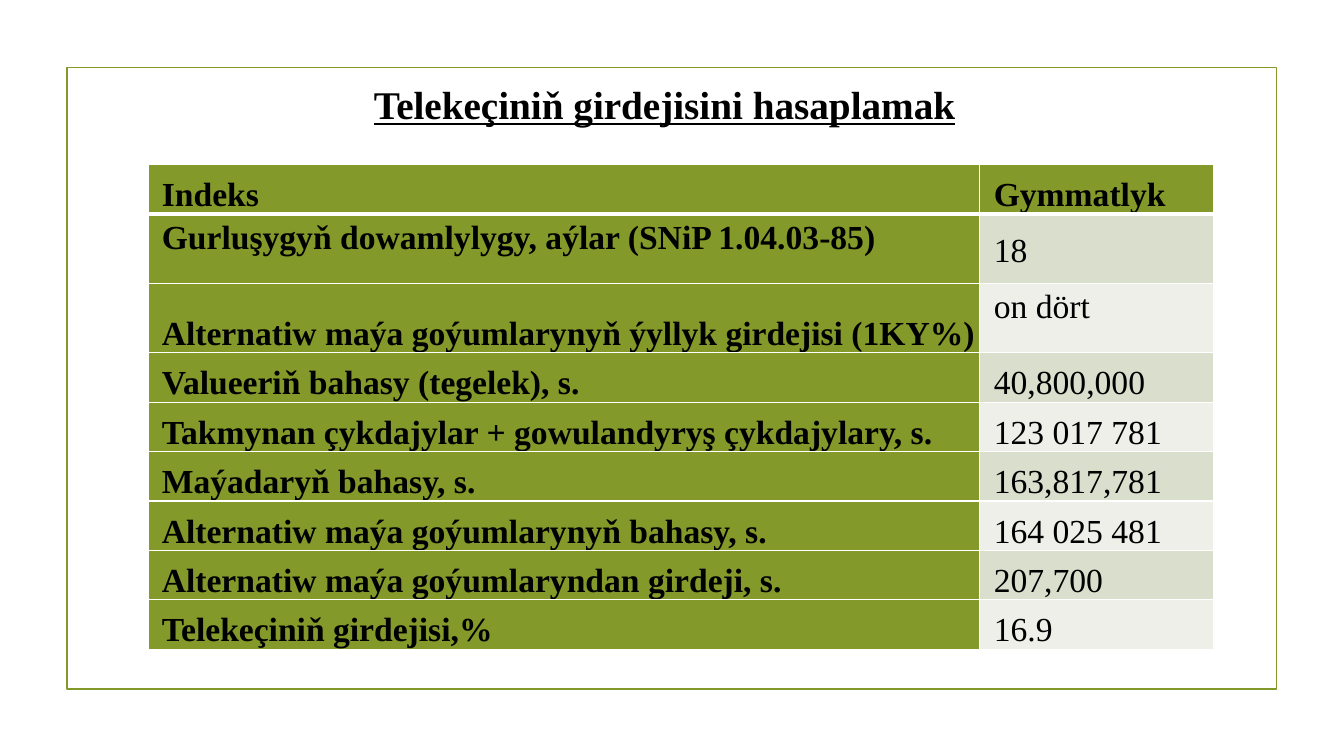
from lxml import etree
from pptx import Presentation
from pptx.dml.color import RGBColor
from pptx.enum.shapes import MSO_SHAPE
from pptx.enum.text import MSO_ANCHOR, MSO_AUTO_SIZE, PP_ALIGN
from pptx.oxml.ns import qn
from pptx.util import Pt

RECTANGLE = MSO_SHAPE.RECTANGLE
TOP, MIDDLE, BOTTOM = MSO_ANCHOR.TOP, MSO_ANCHOR.MIDDLE, MSO_ANCHOR.BOTTOM
JUSTIFY = PP_ALIGN.JUSTIFY
FIT_SHAPE = MSO_AUTO_SIZE.SHAPE_TO_FIT_TEXT

FONT = "Times New Roman"
BLACK = RGBColor(0x00, 0x00, 0x00)
WHITE = RGBColor(0xFF, 0xFF, 0xFF)
OLIVE = RGBColor(0x83, 0x99, 0x2A)
BANDS = (RGBColor(0xD9, 0xDE, 0xCD), RGBColor(0xED, 0xEF, 0xE8))

ROW, TALL_ROW = 35.3, 49.5
COLUMNS = (593.3, 167.8)
ROWS = [
    ("Indeks", "Gymmatlyk", BOTTOM, BOTTOM, ROW),
    ("Gurluşygyň dowamlylygy, aýlar (SNiP 1.04.03-85)", "18", TOP, MIDDLE, TALL_ROW),
    ("Alternatiw maýa goýumlarynyň ýyllyk girdejisi (1KY%)", "on dört", BOTTOM, TOP, TALL_ROW),
    ("Valueeriň bahasy (tegelek), s.", "40,800,000", BOTTOM, BOTTOM, ROW),
    ("Takmynan çykdajylar + gowulandyryş çykdajylary, s.", "123 017 781", BOTTOM, BOTTOM, ROW),
    ("Maýadaryň bahasy, s.", "163,817,781", BOTTOM, BOTTOM, ROW),
    ("Alternatiw maýa goýumlarynyň bahasy, s.", "164 025 481", BOTTOM, BOTTOM, ROW),
    ("Alternatiw maýa goýumlaryndan girdeji, s.", "207,700", BOTTOM, BOTTOM, ROW),
    ("Telekeçiniň girdejisi,%", "16.9", BOTTOM, BOTTOM, ROW),
]


def add_run(p, text, size, bold, underline=None):
    r = p.add_run()
    r.text = text
    r.font.name = FONT
    r.font.size = Pt(size)
    r.font.bold = bold
    r.font.underline = underline
    r.font.color.rgb = BLACK


def add_frame(s):
    sp = s.shapes.add_shape(RECTANGLE, Pt(47.9), Pt(48.2), Pt(864), Pt(444.2))
    sp.shadow.inherit = False
    sp.fill.background()
    sp.line.color.rgb = OLIVE
    sp.line.width = Pt(1.25)


def add_title(s, text):
    sp = s.shapes.add_textbox(Pt(259.9), Pt(54), Pt(434.2), Pt(41))
    tf = sp.text_frame
    tf.word_wrap = False
    tf.auto_size = FIT_SHAPE
    add_run(tf.paragraphs[0], text, 28, True, True)


def set_borders(cell, widths):
    tcPr = cell._tc.get_or_add_tcPr()
    for i, (side, width) in enumerate(widths.items()):
        ln = etree.Element(qn(f"a:ln{side}"), w=str(Pt(width)))
        fill = etree.SubElement(ln, qn("a:solidFill"))
        etree.SubElement(fill, qn("a:srgbClr"), val=str(WHITE))
        tcPr.insert(i, ln)


def fill_cell(cell, text, anchor, color, bold, margin, indent, top, bottom):
    cell.vertical_anchor = anchor
    cell.margin_left = cell.margin_right = Pt(0.6)
    cell.margin_top = cell.margin_bottom = Pt(0)
    cell.fill.solid()
    cell.fill.fore_color.rgb = color
    set_borders(cell, {"L": 1, "R": 1, "T": top, "B": bottom})
    p = cell.text_frame.paragraphs[0]
    p.alignment = JUSTIFY
    p.line_spacing = 1.15
    pPr = p._p.get_or_add_pPr()
    pPr.set("marL", str(Pt(margin)))
    pPr.set("indent", str(Pt(indent)))
    add_run(p, text, 24, bold)


def add_income_table(s):
    height = sum(row[-1] for row in ROWS)
    table = s.shapes.add_table(len(ROWS), len(COLUMNS), Pt(106.1), Pt(117.7),
                               Pt(sum(COLUMNS)), Pt(height)).table
    table.first_col = True
    for column, width in zip(table.columns, COLUMNS):
        column.width = Pt(width)
    for i, (label, value, label_anchor, value_anchor, row_height) in enumerate(ROWS):
        table.rows[i].height = Pt(row_height)
        header = i == 0
        top, bottom = 3 if i == 1 else 1, 3 if header else 1
        value_color = OLIVE if header else BANDS[(i - 1) % 2]
        fill_cell(table.cell(i, 0), label, label_anchor, OLIVE, True, 0, 8.9, top, bottom)
        fill_cell(table.cell(i, 1), value, value_anchor, value_color, header, 9.9, 0, top, bottom)


def main():
    prs = Presentation()
    prs.slide_width, prs.slide_height = Pt(960), Pt(540)
    s = prs.slides.add_slide(prs.slide_layouts[6])
    add_frame(s)
    add_title(s, "Telekeçiniň girdejisini hasaplamak")
    add_income_table(s)
    prs.save("out.pptx")


if __name__ == "__main__":
    main()
